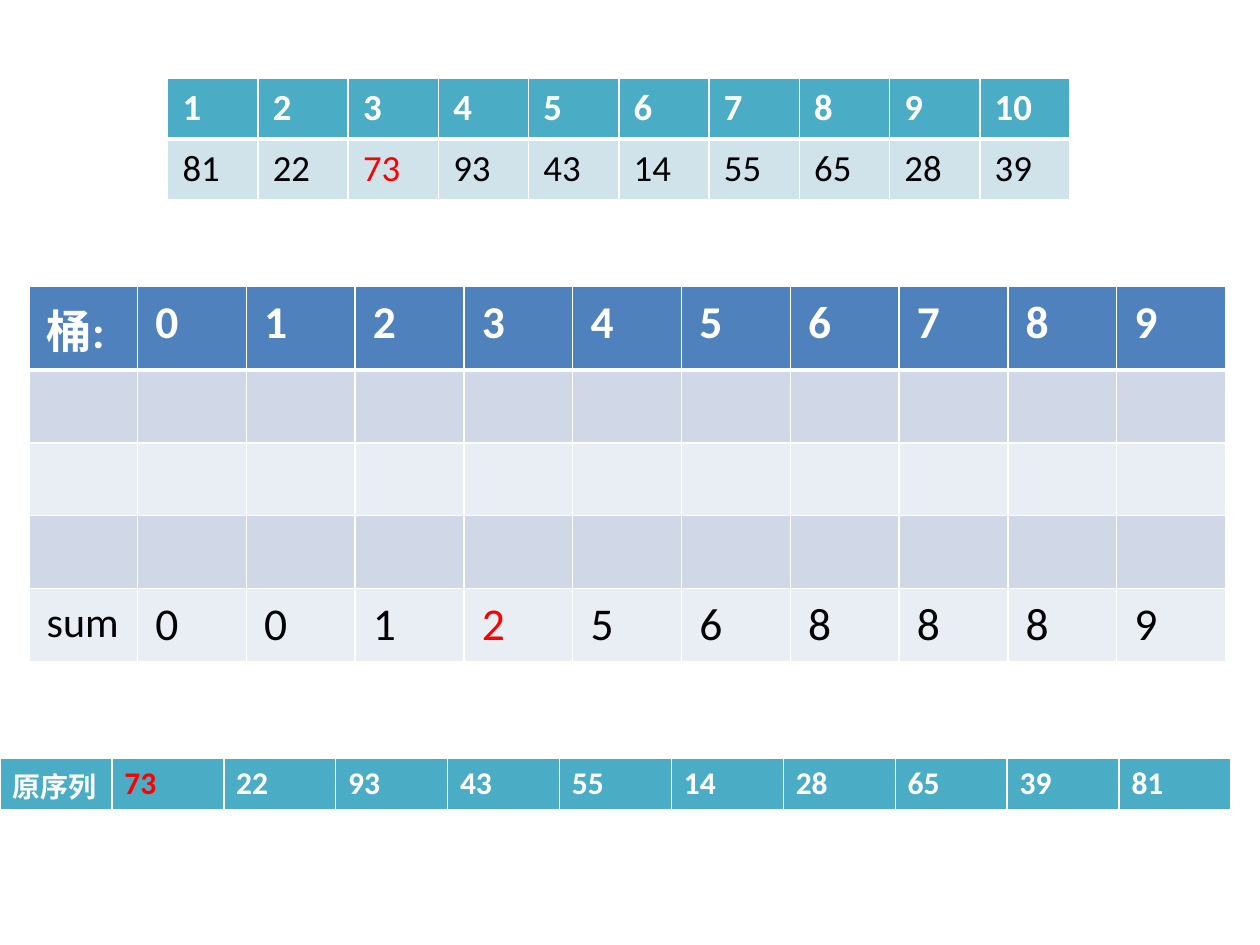
"""Build a bucket-sort slide: keys, bucket prefix sums and the source sequence."""
from dataclasses import dataclass
from typing import Optional

from lxml import etree
from pptx import Presentation
from pptx.dml.color import RGBColor
from pptx.oxml import ns
from pptx.util import Cm, Pt


@dataclass(frozen=True)
class Theme:
    """Colours, font and type sizes of the slide."""
    font: str = "Calibri"
    white: str = "FFFFFF"
    black: str = "000000"
    red: str = "FF0000"
    blue: str = "4F81BD"
    blue_band: str = "D0D8E8"
    blue_pale: str = "E9EDF4"
    teal: str = "4BACC6"
    teal_band: str = "D0E3EA"
    bucket: float = 26
    sum_label: float = 24
    sorted_keys: float = 21
    sequence: float = 18
    sequence_label: float = 16
    rule: float = 1
    heavy_rule: float = 3


THEME = Theme()


@dataclass(frozen=True)
class Row:
    """Values of one table row and their look."""
    values: list[str]
    fill: str
    size: float
    ink: str = THEME.white
    bold: bool = True
    label_size: Optional[float] = None
    highlight: Optional[int] = None
    bottom: float = THEME.rule


@dataclass(frozen=True)
class Grid:
    """Place, cell margins and rows of one table, in centimetres."""
    left: float
    top: float
    width: float
    height: float
    margin_x: float
    margin_y: float
    rows: list[Row]


def band(fill: str) -> Row:
    """Return an empty bucket row."""
    return Row([""] * 11, fill, THEME.sequence)


GRIDS = [
    Grid(0.58, 5.77, 24.13, 7.34, 0.36, 0.18, [
        Row(["桶:", *map(str, range(10))], THEME.blue, THEME.bucket, bottom=THEME.heavy_rule),
        band(THEME.blue_band),
        band(THEME.blue_pale),
        band(THEME.blue_band),
        Row("sum 0 0 1 2 5 6 8 8 8 9".split(), THEME.blue_pale, THEME.bucket, THEME.black,
            bold=False, label_size=THEME.sum_label, highlight=4),
    ]),
    Grid(3.38, 1.57, 18.19, 2.46, 0.3, 0.15, [
        Row([str(n) for n in range(1, 11)], THEME.teal, THEME.sorted_keys,
            bottom=THEME.heavy_rule),
        Row("81 22 73 93 43 14 55 65 28 39".split(), THEME.teal_band, THEME.sorted_keys,
            THEME.black, bold=False, highlight=2),
    ]),
    Grid(0, 15.29, 24.82, 1.04, 0.25, 0.13, [
        Row("原序列 73 22 93 43 55 14 28 65 39 81".split(), THEME.teal, THEME.sequence,
            label_size=THEME.sequence_label, highlight=1, bottom=THEME.heavy_rule),
    ]),
]


def draw_borders(cell, top: float, bottom: float) -> None:
    """Rule the four sides of a cell in white."""
    properties = cell._tc.get_or_add_tcPr()
    weights = {"lnL": THEME.rule, "lnR": THEME.rule, "lnT": top, "lnB": bottom}
    for position, (side, weight) in enumerate(weights.items()):
        line = etree.Element(ns.qn(f"a:{side}"), w=str(Pt(weight)))
        solid = etree.SubElement(line, ns.qn("a:solidFill"))
        etree.SubElement(solid, ns.qn("a:srgbClr"), val=THEME.white)
        properties.insert(position, line)


def draw_cell(cell, grid: Grid, row: Row, column: int, top: float) -> None:
    """Fill, rule and write one cell."""
    cell.fill.solid()
    cell.fill.fore_color.rgb = RGBColor.from_string(row.fill)
    cell.margin_left = cell.margin_right = Cm(grid.margin_x)
    cell.margin_top = cell.margin_bottom = Cm(grid.margin_y)
    draw_borders(cell, top, row.bottom)
    value = row.values[column]
    if not value:
        return
    run = cell.text_frame.paragraphs[0].add_run()
    run.text = value
    run.font.name = THEME.font
    run.font.bold = row.bold
    run.font.size = Pt(row.label_size if column == 0 and row.label_size else row.size)
    ink = THEME.red if column == row.highlight else row.ink
    run.font.color.rgb = RGBColor.from_string(ink)


def draw_grid(slide, grid: Grid) -> None:
    """Draw a table with equal columns and rows."""
    columns = len(grid.rows[0].values)
    table = slide.shapes.add_table(len(grid.rows), columns, Cm(grid.left), Cm(grid.top),
                                   Cm(grid.width), Cm(grid.height)).table
    top = THEME.rule
    for index, row in enumerate(grid.rows):
        for column in range(columns):
            draw_cell(table.cell(index, column), grid, row, column, top)
        top = row.bottom


def main() -> None:
    """Create and save the slide."""
    deck = Presentation()
    deck.slide_width, deck.slide_height = Cm(25.4), Cm(19.05)
    slide = deck.slides.add_slide(deck.slide_layouts[6])
    for grid in GRIDS:
        draw_grid(slide, grid)
    deck.save("out.pptx")


if __name__ == "__main__":
    main()
